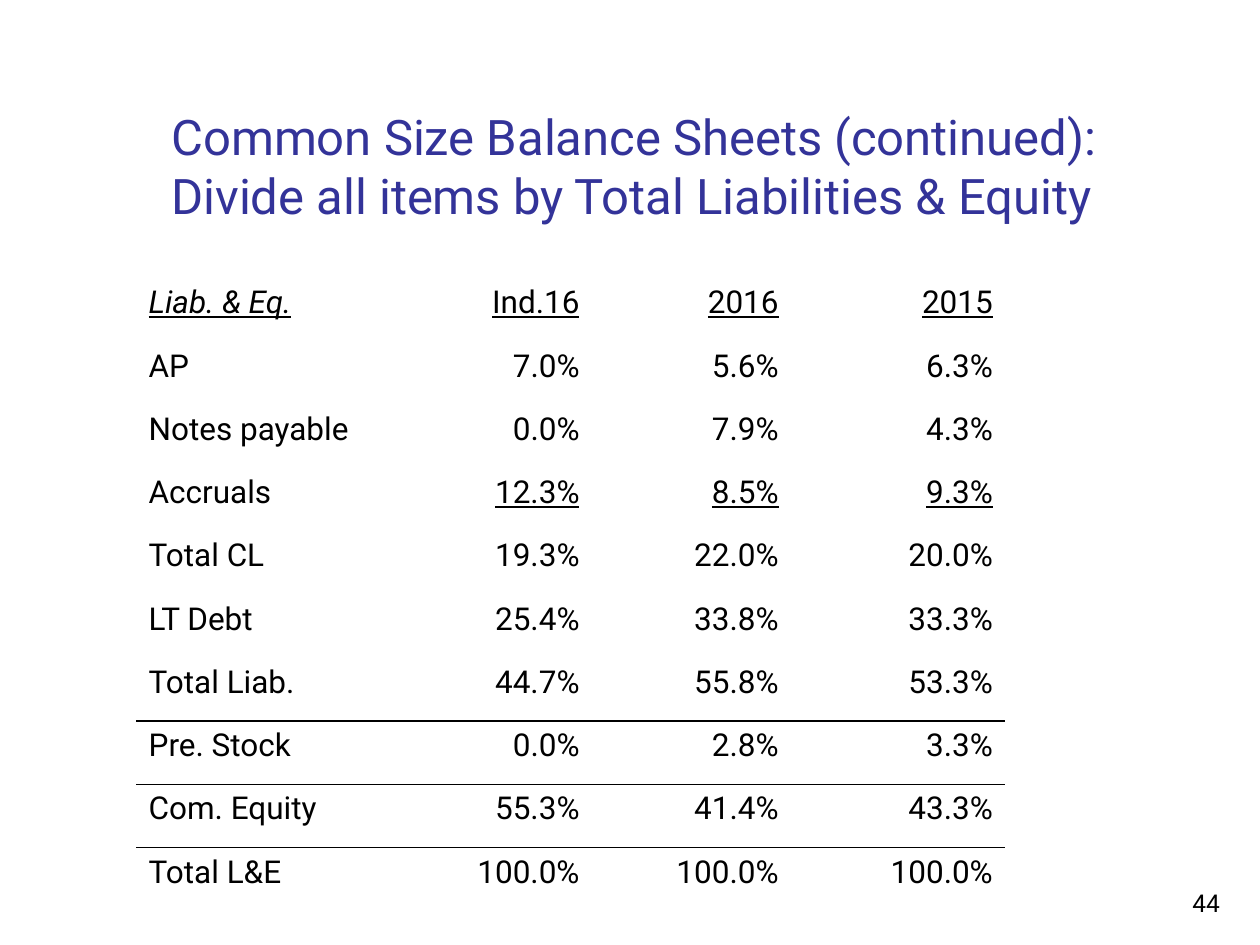
import lxml.etree
import pptx
import pptx.dml.color
import pptx.enum.text
import pptx.oxml.ns
import pptx.util

GRID_COLUMNS = 100
GRID_ROWS = 75
FONT = "Roboto"
INDIGO = pptx.dml.color.RGBColor(0x33, 0x33, 0x99)
BLACK = pptx.dml.color.RGBColor(0, 0, 0)
PLAIN_TABLE = "{2D5ABB26-0587-4C30-8999-92F81FD0307C}"
RIGHT = pptx.enum.text.PP_ALIGN.RIGHT
LEFT = pptx.enum.text.PP_ALIGN.LEFT
BOTTOM = pptx.enum.text.MSO_ANCHOR.BOTTOM

TITLE_LINES = [
    "Common Size Balance Sheets (continued):",
    "Divide all items by Total Liabilities & Equity",
]
BALANCE_SHEET = [
    ("Liab. & Eq.", "Ind.16", "2016", "2015"),
    ("AP", "7.0%", "5.6%", "6.3%"),
    ("Notes payable", "0.0%", "7.9%", "4.3%"),
    ("Accruals", "12.3%", "8.5%", "9.3%"),
    ("Total CL", "19.3%", "22.0%", "20.0%"),
    ("LT Debt", "25.4%", "33.8%", "33.3%"),
    ("Total Liab.", "44.7%", "55.8%", "53.3%"),
    ("Pre. Stock", "0.0%", "2.8%", "3.3%"),
    ("Com. Equity", "55.3%", "41.4%", "43.3%"),
    ("Total L&E", "100.0%", "100.0%", "100.0%"),
]
COLUMN_WIDTHS = [20.2, 16, 15.8, 17]
HEADER_ROW = 0
ACCRUALS_ROW = 3
RULED_BELOW = {6, 7, 8}


def grid_box(deck, left, top, width, height):
    column = deck.slide_width / GRID_COLUMNS
    row = deck.slide_height / GRID_ROWS
    return (round(left * column), round(top * row),
            round(width * column), round(height * row))


def add_span(para, text, size, color):
    span = para.add_run()
    span.text = text
    span.font.name = FONT
    span.font.size = pptx.util.Pt(size)
    span.font.color.rgb = color
    return span


def fill_title(page, box):
    title = page.shapes.title
    title.left, title.top, title.width, title.height = box
    frame = title.text_frame
    frame.word_wrap = True
    frame.auto_size = pptx.enum.text.MSO_AUTO_SIZE.NONE
    frame.vertical_anchor = BOTTOM
    para = frame.paragraphs[0]
    para.alignment = LEFT
    for index, line in enumerate(TITLE_LINES):
        if index:
            para.add_line_break()
        add_span(para, line, 28, INDIGO)


def add_page_number(page, box, number):
    frame = page.shapes.add_textbox(*box).text_frame
    frame.word_wrap = True
    frame.vertical_anchor = BOTTOM
    para = frame.paragraphs[0]
    para.alignment = RIGHT
    add_span(para, number, 14, BLACK)


def draw_rule(cell, side):
    properties = cell._tc.get_or_add_tcPr()
    name = pptx.oxml.ns.qn
    line = lxml.etree.SubElement(properties, name("a:" + side))
    line.set("w", str(pptx.util.Pt(1)))
    fill = lxml.etree.SubElement(line, name("a:solidFill"))
    lxml.etree.SubElement(fill, name("a:srgbClr")).set("val", str(BLACK))


def fill_cell(cell, text, row, column):
    para = cell.text_frame.paragraphs[0]
    para.alignment = RIGHT if column else LEFT
    span = add_span(para, text, 18, BLACK)
    span.font.italic = row == HEADER_ROW and column == 0
    span.font.underline = row == HEADER_ROW or (row == ACCRUALS_ROW and column > 0)
    if row - 1 in RULED_BELOW:
        draw_rule(cell, "lnT")
    if row in RULED_BELOW:
        draw_rule(cell, "lnB")
    cell.fill.background()


def add_balance_sheet(page, box):
    width, height = box[2:]
    frame = page.shapes.add_table(len(BALANCE_SHEET), len(COLUMN_WIDTHS), *box)
    table = frame.table
    table.first_row = False
    table.horz_banding = False
    table._tbl.tblPr.find(pptx.oxml.ns.qn("a:tableStyleId")).text = PLAIN_TABLE
    for column, share in zip(table.columns, COLUMN_WIDTHS):
        column.width = round(width * share / sum(COLUMN_WIDTHS))
    for row in table.rows:
        row.height = round(height / len(BALANCE_SHEET))
    for row, texts in enumerate(BALANCE_SHEET):
        for column, text in enumerate(texts):
            fill_cell(table.cell(row, column), text, row, column)


def main():
    deck = pptx.Presentation()
    deck.slide_width = pptx.util.Inches(10)
    deck.slide_height = pptx.util.Inches(7.5)
    page = deck.slides.add_slide(deck.slide_layouts.get_by_name("Title Only"))
    add_page_number(page, grid_box(deck, 77, 68.3, 20.8, 5), "44")
    fill_title(page, grid_box(deck, 12.6, 2.3, 85.2, 16))
    add_balance_sheet(page, grid_box(deck, 10.8, 22.1, 69, 50.2))
    deck.save("out.pptx")


if __name__ == "__main__":
    main()
